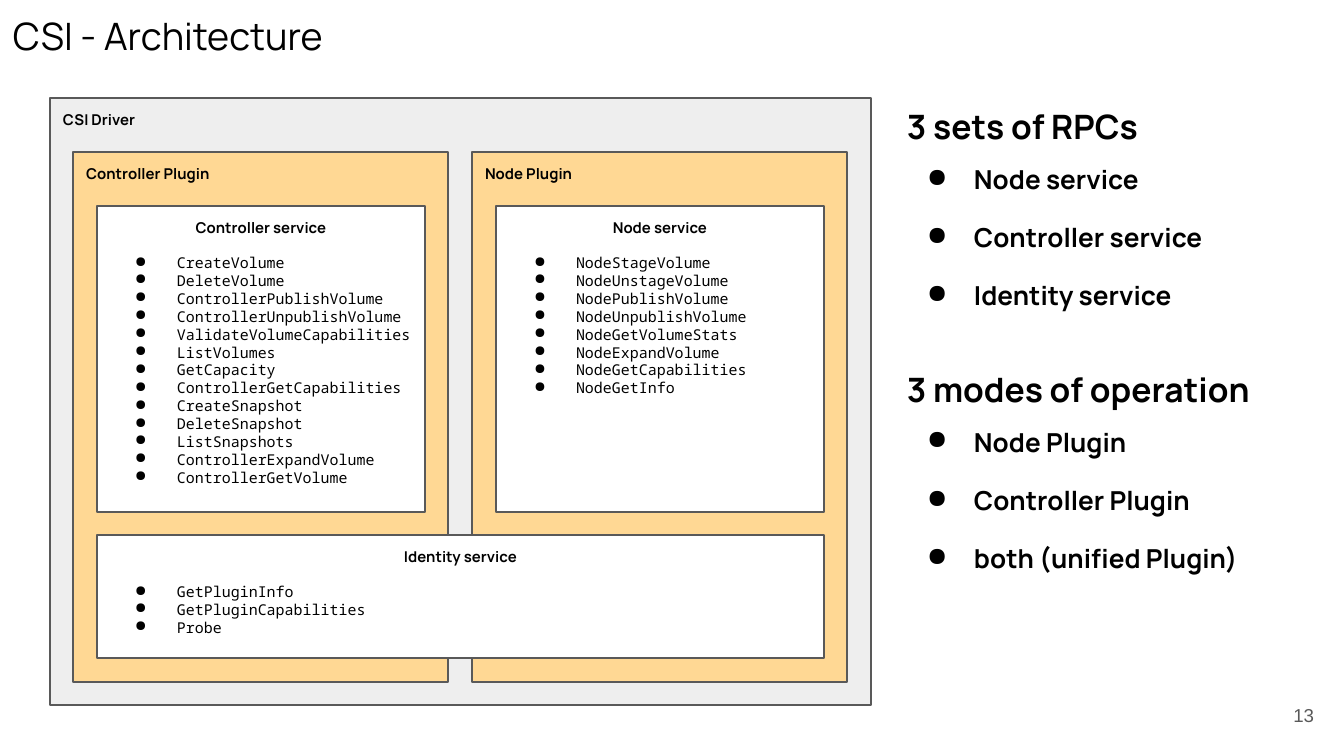
from lxml.etree import SubElement
from pptx import Presentation
from pptx.dml.color import RGBColor
from pptx.enum.shapes import MSO_SHAPE
from pptx.enum.text import MSO_ANCHOR, PP_ALIGN
from pptx.oxml.ns import qn
from pptx.util import Pt

EMU_PER_PX = 914400 / 134.4
BLACK, GRAY, PALE, ORANGE, WHITE = "000000", "595959", "EEEEEE", "FFD894", "FFFFFF"
SANS, MONO = "Manrope", "Noto Sans Mono"


def px(n):
    return round(n * EMU_PER_PX)


def color(code):
    return RGBColor.from_string(code)


def add_text(tf, text, first=False, size=8, font=SANS, fill=BLACK, bold=False,
             align=PP_ALIGN.LEFT, before=0, hang=0):
    """Write one paragraph; hang is the width of the bullet's hanging indent."""
    p = tf.paragraphs[0] if first else tf.add_paragraph()
    p.alignment = align
    if before:
        p.space_before = Pt(before)
    if hang:
        pPr = p._p.get_or_add_pPr()
        pPr.set("marL", str(px(67)))
        pPr.set("indent", str(-px(hang)))
        clr = SubElement(pPr, qn("a:buClr"))
        SubElement(clr, qn("a:srgbClr"), val=BLACK)
        SubElement(pPr, qn("a:buChar"), char="●")
    r = p.add_run()
    r.text = text
    r.font.size, r.font.name, r.font.bold = Pt(size), font, bold
    r.font.color.rgb = color(fill)


class Deck:
    def __init__(self, width, height):
        self.prs = Presentation()
        self.prs.slide_width, self.prs.slide_height = px(width), px(height)
        self.s = self.prs.slides.add_slide(self.prs.slide_layouts[6])

    def frame(self, sp, anchor=MSO_ANCHOR.TOP):
        tf = sp.text_frame
        tf.word_wrap = True
        tf.vertical_anchor = anchor
        tf.margin_left = tf.margin_right = tf.margin_top = tf.margin_bottom = px(13)
        return tf

    def text_box(self, x, y, w, h, anchor=MSO_ANCHOR.TOP):
        sp = self.s.shapes.add_textbox(px(x), px(y), px(w), px(h))
        return self.frame(sp, anchor)

    def box(self, group, title, x, y, w, h, fill, align=PP_ALIGN.LEFT):
        sp = group.shapes.add_shape(MSO_SHAPE.RECTANGLE, px(x), px(y), px(w), px(h))
        sp.shadow.inherit = False
        sp.fill.solid()
        sp.fill.fore_color.rgb = color(fill)
        sp.line.color.rgb = color(GRAY)
        sp.line.width = Pt(0.75)
        tf = self.frame(sp)
        add_text(tf, title, first=True, bold=True, align=align)
        return tf

    def service(self, group, title, calls, x, y, w, h):
        tf = self.box(group, title, x, y, w, h, WHITE, PP_ALIGN.CENTER)
        for i, call in enumerate(calls):
            add_text(tf, call, font=MONO, hang=42, before=0 if i else 9)


CONTROLLER_CALLS = [
    "CreateVolume", "DeleteVolume", "ControllerPublishVolume",
    "ControllerUnpublishVolume", "ValidateVolumeCapabilities", "ListVolumes",
    "GetCapacity", "ControllerGetCapabilities", "CreateSnapshot",
    "DeleteSnapshot", "ListSnapshots", "ControllerExpandVolume",
    "ControllerGetVolume",
]
NODE_CALLS = [
    "NodeStageVolume", "NodeUnstageVolume", "NodePublishVolume",
    "NodeUnpublishVolume", "NodeGetVolumeStats", "NodeExpandVolume",
    "NodeGetCapabilities", "NodeGetInfo",
]
IDENTITY_CALLS = ["GetPluginInfo", "GetPluginCapabilities", "Probe"]
SUMMARY = [
    ("3 sets of RPCs", ["Node service", "Controller service", "Identity service"]),
    ("3 modes of operation",
     ["Node Plugin", "Controller Plugin", "both (unified Plugin)"]),
]


def main():
    deck = Deck(1344, 756)

    # Title
    add_text(deck.text_box(0, 0, 1173, 85), "CSI - Architecture", first=True, size=20.2)

    # Driver with its two plugins, each holding a service
    driver = deck.s.shapes.add_group_shape()
    deck.box(driver, "CSI Driver", 50, 98, 821, 607, PALE)
    plugins = [("Controller", CONTROLLER_CALLS), ("Node", NODE_CALLS)]
    for i, (name, calls) in enumerate(plugins):
        x = 73 + 399 * i
        deck.box(driver, f"{name} Plugin", x, 152, 375, 530, ORANGE)
        deck.service(driver, f"{name} service", calls, x + 24, 206, 328, 306)

    # Service shared by both plugins
    deck.service(driver, "Identity service", IDENTITY_CALLS, 97, 535, 727, 123)

    # Summary lists
    tf = deck.text_box(894, 93, 450, 593)
    for i, (heading, items) in enumerate(SUMMARY):
        add_text(tf, heading, first=i == 0, size=18, bold=True, before=31 * i)
        for j, item in enumerate(items):
            add_text(tf, item, size=14, bold=True, hang=47, before=14.4 if j else 9)

    # Slide number
    add_text(deck.text_box(1246, 686, 81, 58, MSO_ANCHOR.MIDDLE), "13", first=True,
             size=10, font="Arial", fill=GRAY, align=PP_ALIGN.RIGHT)

    deck.prs.save("out.pptx")


if __name__ == "__main__":
    main()
